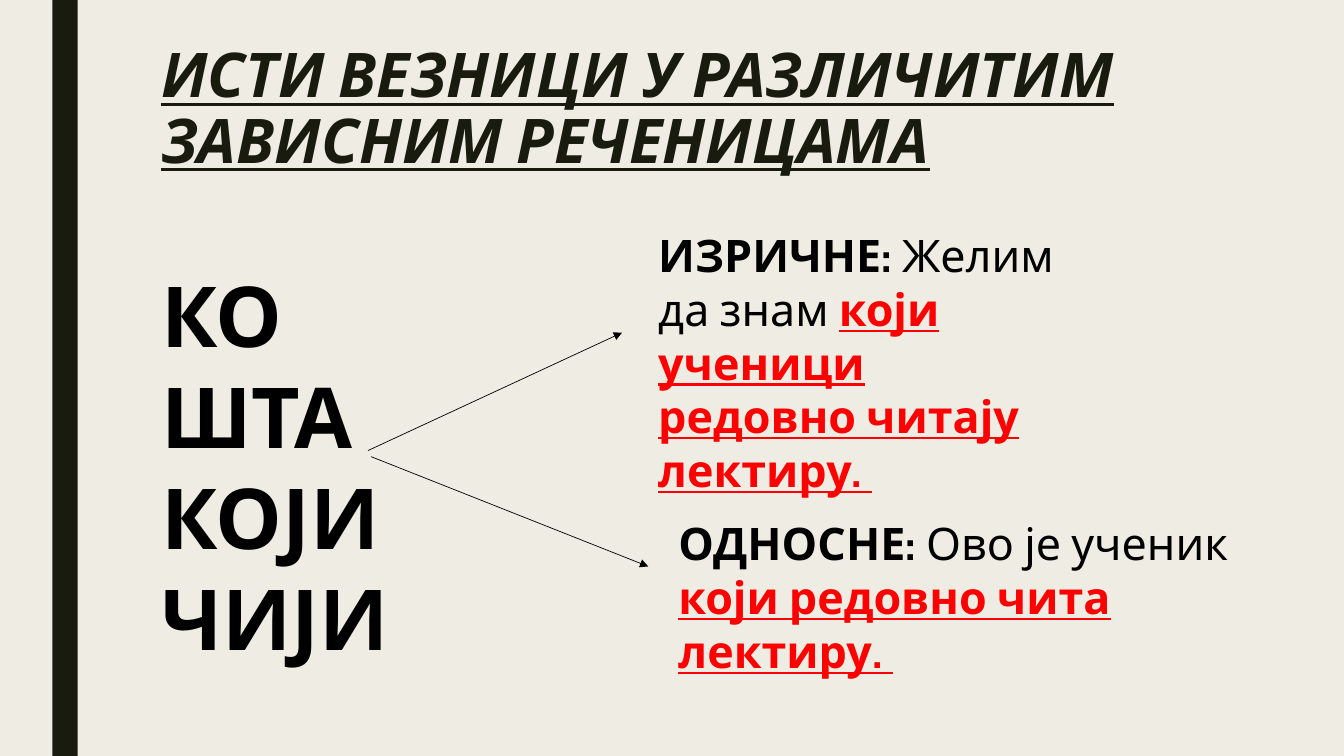
from dataclasses import dataclass

from lxml import etree
from pptx import Presentation
from pptx.dml.color import RGBColor
from pptx.enum.shapes import MSO_CONNECTOR, MSO_SHAPE
from pptx.enum.text import MSO_ANCHOR
from pptx.oxml.ns import qn
from pptx.slide import Slide
from pptx.util import Inches, Pt

STRAIGHT = MSO_CONNECTOR.STRAIGHT
RECTANGLE = MSO_SHAPE.RECTANGLE
TOP = MSO_ANCHOR.TOP

CREAM = RGBColor(0xEF, 0xED, 0xE3)
DARK_OLIVE = RGBColor(0x19, 0x1B, 0x0E)
BLACK = RGBColor(0x00, 0x00, 0x00)
RED = RGBColor(0xFF, 0x00, 0x00)
FONT_NAME = "Cabin"


@dataclass(frozen=True)
class Run:
    text: str
    color: RGBColor = BLACK
    bold: bool = True
    italic: bool = False
    underline: bool = False


@dataclass(frozen=True)
class Example:
    left: float
    top: float
    width: float
    height: float
    clause_type: str
    opening: str
    clause: str


@dataclass(frozen=True)
class Arrow:
    start: tuple[float, float]
    end: tuple[float, float]


TITLE = Run("ИСТИ ВЕЗНИЦИ У РАЗЛИЧИТИМ ЗАВИСНИМ РЕЧЕНИЦАМА",
            color=DARK_OLIVE, italic=True, underline=True)
CONJUNCTIONS = ("КО", "ШТА", "КОЈИ", "ЧИЈИ")
EXAMPLES = (
    Example(6.43, 2.21, 4.21, 2.26, "ИЗРИЧНЕ: ", "Желим да знам ",
            "који ученици редовно читају лектиру. "),
    Example(6.63, 5.07, 5.75, 1.18, "ОДНОСНЕ: ", "Ово је ученик ",
            "који редовно чита лектиру. "),
)
ARROWS = (
    Arrow((3.65, 4.47), (6.17, 3.3)),
    Arrow((3.68, 4.53), (6.43, 5.62)),
)


def add_text(slide: Slide, paragraphs: list[list[Run]], *, left: float, top: float,
             width: float, height: float, size: float, line_spacing: float = 1.0) -> None:
    box = slide.shapes.add_textbox(Inches(left), Inches(top), Inches(width), Inches(height))
    frame = box.text_frame
    frame.word_wrap = True
    frame.vertical_anchor = TOP
    for index, runs in enumerate(paragraphs):
        paragraph = frame.add_paragraph() if index else frame.paragraphs[0]
        paragraph.line_spacing = line_spacing
        for item in runs:
            run = paragraph.add_run()
            run.text = item.text
            run.font.name = FONT_NAME
            run.font.size = Pt(size)
            run.font.bold = item.bold
            run.font.italic = item.italic
            run.font.underline = item.underline
            run.font.color.rgb = item.color


def add_side_bar(slide: Slide) -> None:
    bar = slide.shapes.add_shape(RECTANGLE, Inches(0.52), Inches(0), Inches(0.25), Inches(7.5))
    bar.shadow.inherit = False
    bar.fill.solid()
    bar.fill.fore_color.rgb = DARK_OLIVE
    bar.line.fill.background()


def add_arrow(slide: Slide, arrow: Arrow) -> None:
    start_x, start_y = map(Inches, arrow.start)
    end_x, end_y = map(Inches, arrow.end)
    connector = slide.shapes.add_connector(STRAIGHT, start_x, start_y, end_x, end_y)
    connector.line.color.rgb = BLACK
    connector.line.width = Pt(0.5)
    properties = connector.element.spPr
    etree.SubElement(properties.find(qn("a:ln")), qn("a:tailEnd"), type="triangle")
    etree.SubElement(properties, qn("a:effectLst"))


def main() -> None:
    presentation = Presentation()
    presentation.slide_width = Inches(13.33)
    presentation.slide_height = Inches(7.5)
    slide = presentation.slides.add_slide(presentation.slide_layouts[6])
    slide.background.fill.solid()
    slide.background.fill.fore_color.rgb = CREAM

    add_side_bar(slide)
    add_text(slide, [[TITLE]], left=1.5, top=0.4, width=10.5, height=1.62,
             size=44, line_spacing=0.89)
    add_text(slide, [[Run(word)] for word in CONJUNCTIONS],
             left=1.5, top=2.57, width=5.25, height=4.14, size=60)
    for arrow in ARROWS:
        add_arrow(slide, arrow)
    for example in EXAMPLES:
        runs = [Run(example.clause_type), Run(example.opening, bold=False),
                Run(example.clause, color=RED, underline=True)]
        add_text(slide, [runs], left=example.left, top=example.top,
                 width=example.width, height=example.height, size=32)

    presentation.save("out.pptx")


if __name__ == "__main__":
    main()
